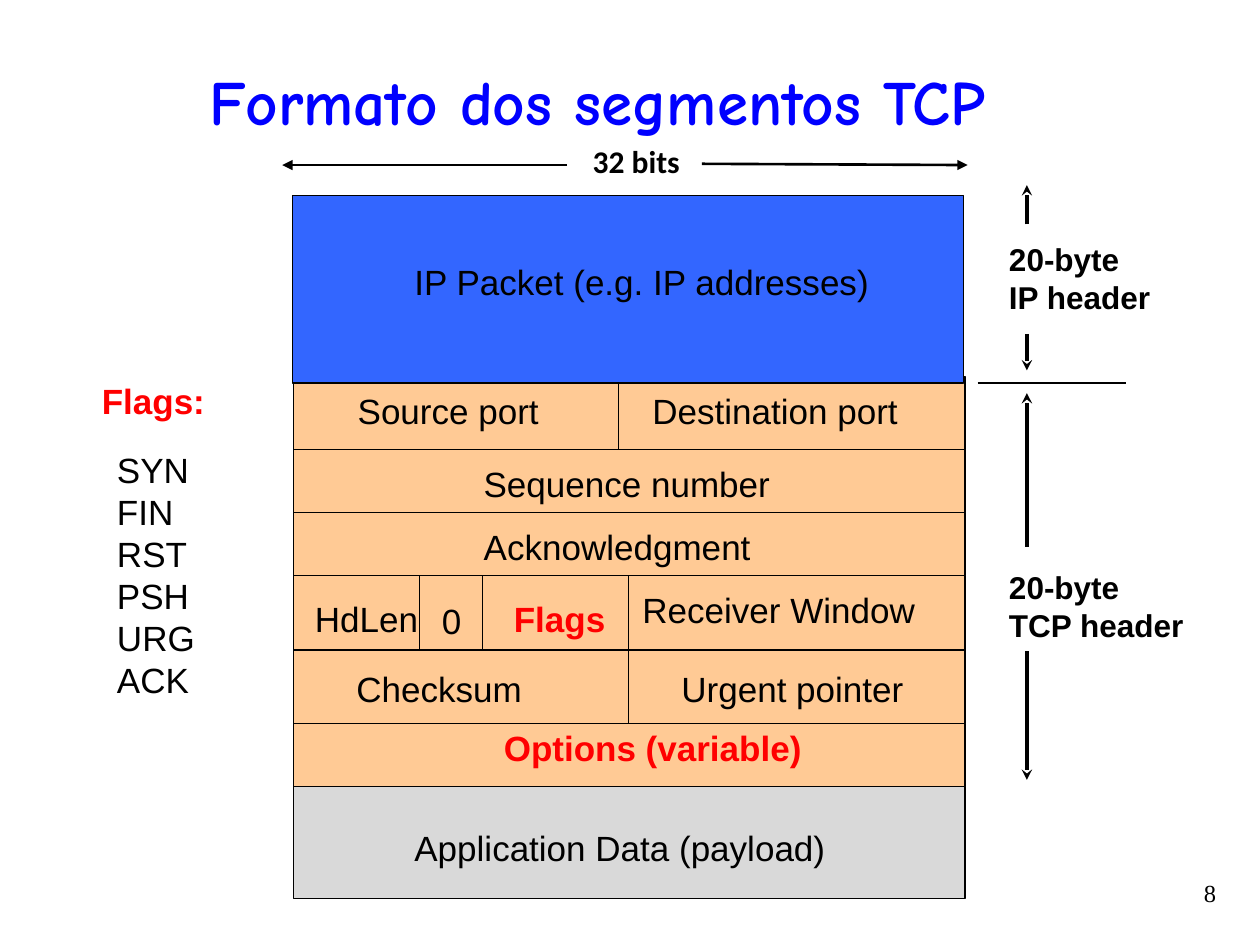
from lxml.etree import SubElement
from pptx import Presentation
from pptx.dml.color import RGBColor as RGB
from pptx.enum.shapes import MSO_CONNECTOR as LINK, MSO_SHAPE as SHAPE
from pptx.enum.text import (MSO_ANCHOR as ANCHOR, MSO_AUTO_SIZE as AUTO,
                            PP_ALIGN as ALIGN)
from pptx.oxml.ns import qn
from pptx.util import Pt

PX = 9144  # EMU per px, 100 px to the inch
INK = {"black": "000000", "red": "FF0000", "title": "0000FF",
       "tcp": "FFCA95", "data": "D9D9D9", "ip": "3366FF"}

# TCP segment, top to bottom: height, inner column edges, fill
LEFT, TOP, RIGHT = 233, 299, 766
ROWS = [(58, [491], "tcp"), (50, [], "tcp"), (50, [], "tcp"),
        (59, [499], "tcp"), (58, [499], "tcp"), (50, [], "tcp"),
        (89, [], "data")]
IP_BOX = (232, 155, 533, 149)

RED = {"color": "red", "bold": True}
SIDE = {"size": 18, "bold": True}
FILL = {"fill": "tcp"}
LABELS = [
    ("IP Packet (e.g. IP addresses)", (319, 202, 384, 44), {}),
    ("Source port", (274, 304, 165, 44), {}),
    ("Destination port", (508, 304, 217, 44), {}),
    ("Sequence number", (374, 362, 250, 44), FILL),
    ("Acknowledgment", (374, 412, 235, 44), FILL),
    ("Receiver Window", (500, 462, 240, 44), FILL),
    ("HdLen", (240, 469, 109, 43), {**FILL, "wrap": True}),
    ("0", (341, 471, 36, 43), FILL),
    ("Flags", (398, 469, 94, 44), {**RED, **FILL}),
    ("Checksum", (273, 525, 155, 44), FILL),
    ("Urgent pointer", (531, 525, 200, 44), FILL),
    ("Options (variable)", (390, 572, 259, 44), RED),
    ("Application Data (payload)", (319, 651, 351, 44), {}),
    ("20-byte\nIP header", (791, 186, 134, 70), SIDE),
    ("20-byte\nTCP header", (791, 446, 160, 70), SIDE),
    ("32 bits", (460, 108, 90, 40),
     {**SIDE, "font": "Calibri", "align": ALIGN.CENTER}),
    ("Flags:", (71, 296, 103, 44), RED),
    ("SYN\nFIN\nRST\nPSH\nURG\nACK", (83, 351, 82, 210), {}),
    ("8", (875, 692, 100, 42),
     {"size": 14, "font": "Times New Roman", "align": ALIGN.RIGHT,
      "wrap": True}),
]

# Start, end, width in points, arrowhead at the end
LINES = [
    ((333, 457), (333, 516), 0.75, None),
    ((383, 457), (383, 516), 0.75, None),
    ((776, 304), (894, 304), 0.75, None),
    ((557, 130), (768, 131), 1.5, "triangle"),
    ((450, 131), (224, 131), 1.5, "triangle"),
    ((815, 178), (815, 147), 2, "stealth"),
    ((815, 265), (815, 294), 2, "stealth"),
    ((815, 434), (815, 312), 2, "stealth"),
    ((815, 517), (815, 619), 2, "stealth"),
]


def emu(vals):
    return [v * PX for v in vals]


def paint(obj, name):
    obj.solid()
    obj.fore_color.rgb = RGB.from_string(INK[name])


def write(frame, text, size=20, font="Arial", color="black", bold=False,
          align=ALIGN.LEFT, wrap=False):
    frame.word_wrap = wrap
    frame.text = text
    for para in frame.paragraphs:
        para.alignment = align
        for run in para.runs:
            face = run.font
            face.name, face.size, face.bold = font, Pt(size), bold
            face.color.rgb = RGB.from_string(INK[color])


def cell(slide, box, fill):
    rect = slide.shapes.add_shape(SHAPE.RECTANGLE, *emu(box))
    rect.shadow.inherit = False
    paint(rect.fill, fill)
    paint(rect.line.fill, "black")
    rect.line.width = Pt(0.75)


def label(slide, text, box, fill=None, **style):
    area = slide.shapes.add_textbox(*emu(box))
    if fill:
        paint(area.fill, fill)
    area.text_frame.auto_size = AUTO.SHAPE_TO_FIT_TEXT
    write(area.text_frame, text, **style)


def rule(slide, start, end, width, head):
    link = slide.shapes.add_connector(LINK.STRAIGHT, *emu(start + end))
    paint(link.line.fill, "black")
    link.line.width = Pt(width)
    props = link._element.spPr
    if head:
        SubElement(props.find(qn("a:ln")), qn("a:tailEnd"), type=head)
    SubElement(props, qn("a:effectLst"))


def main():
    deck = Presentation()
    deck.slide_width, deck.slide_height = emu((1000, 750))
    slide = deck.slides.add_slide(deck.slide_layouts[5])

    title = slide.shapes.title
    title.left, title.top, title.width, title.height = emu((33, 42, 882, 75))
    title.text_frame.vertical_anchor = ANCHOR.MIDDLE
    write(title.text_frame, "Formato dos segmentos TCP", size=36,
          font="Comic Neue", color="title", bold=True, align=ALIGN.CENTER,
          wrap=True)

    y = TOP
    for high, cuts, fill in ROWS:
        edges = [LEFT, *cuts, RIGHT]
        for x, end in zip(edges, edges[1:]):
            cell(slide, (x, y, end - x, high), fill)
        y += high
    cell(slide, IP_BOX, "ip")

    for text, box, style in LABELS:
        label(slide, text, box, **style)
    for line in LINES:
        rule(slide, *line)

    deck.save("out.pptx")


if __name__ == "__main__":
    main()
